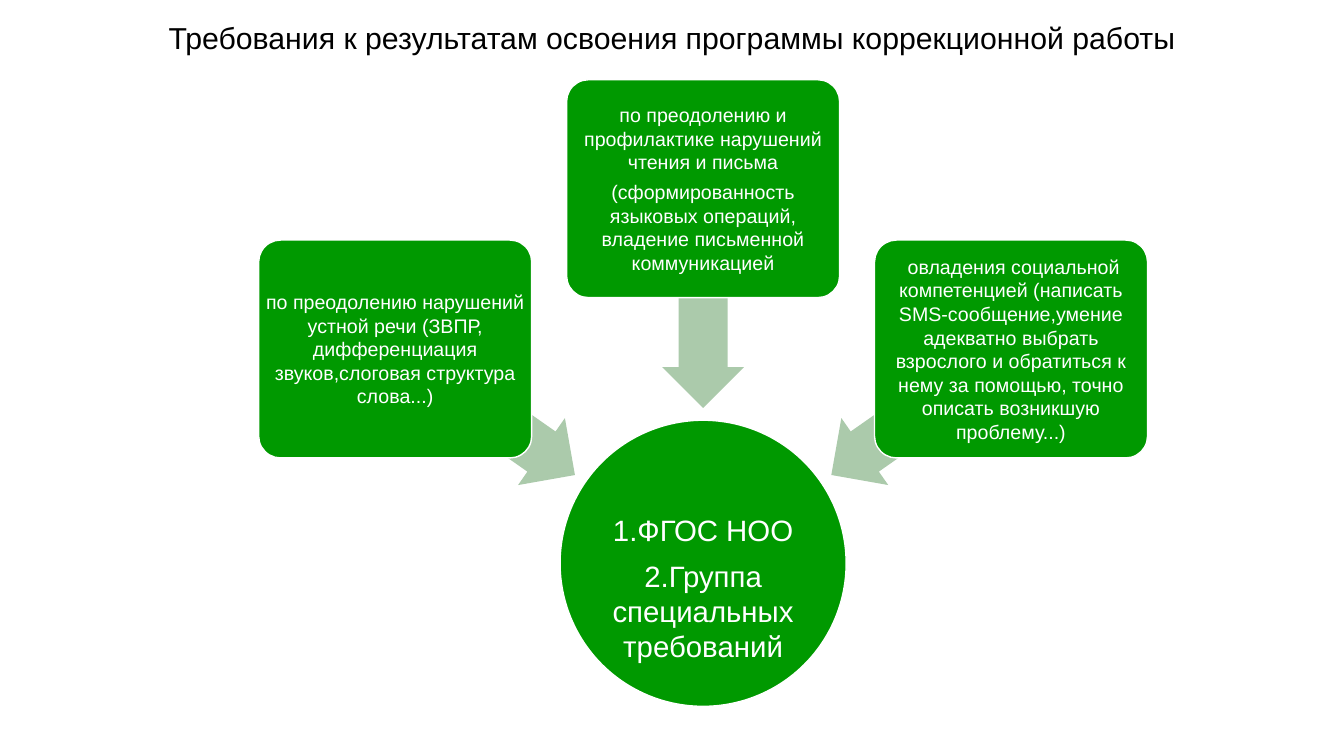
from dataclasses import dataclass

from pptx import Presentation
from pptx import util as u
from pptx.dml.color import RGBColor
from pptx.enum import shapes, text

GREEN, PALE_GREEN, WHITE, BLACK = "009900", "ABCAAB", "FFFFFF", "000000"
AXIS = 17.72  # centre of the diagram, cm
BOX_W, BOX_H, BOX_STEP = 6.88, 5.49, 7.76
ARROW_W, ARROW_H, ARROW_STEP = 5.54, 2.06, 5.5
CIRCLE_D, CIRCLE_TOP = 7.21, 10.59


@dataclass
class Requirement:
    column: int  # -1 left, 0 middle, 1 right of the axis
    box_top: float
    arrow_middle: float
    arrow_angle: int
    paragraphs: list[str]


REQUIREMENTS = [
    Requirement(-1, 6.05, 10.38, 215, [
        "по преодолению нарушений устной речи (ЗВПР, дифференциация "
        "звуков,слоговая структура слова...)"]),
    Requirement(0, 2.01, 7.51, 270, [
        "по преодолению и профилактике нарушений чтения и письма",
        "(сформированность языковых операций, владение письменной коммуникацией"]),
    Requirement(1, 6.05, 10.38, 325, [
        " овладения социальной компетенцией (написать SMS-сообщение,умение "
        "адекватно выбрать взрослого и обратиться к нему за помощью, точно "
        "описать возникшую проблему...)"]),
]


def rgb(value: str) -> RGBColor:
    return RGBColor.from_string(value)


def write(shape, paragraphs: list[str], size: float, color: str,
          top_inset: float = 0) -> None:
    frame = shape.text_frame
    frame.word_wrap = True
    frame.vertical_anchor = text.MSO_ANCHOR.MIDDLE
    frame.margin_left = frame.margin_right = frame.margin_bottom = 0
    frame.margin_top = u.Cm(top_inset)
    for index, words in enumerate(paragraphs):
        paragraph = frame.add_paragraph() if index else frame.paragraphs[0]
        paragraph.alignment = text.PP_ALIGN.CENTER
        paragraph.line_spacing = u.Pt(round(size * 1.2, 1))
        if index:
            paragraph.space_before = u.Pt(round(size * 0.35, 1))
        run = paragraph.add_run()
        run.text = words
        run.font.name = "Arial"
        run.font.size = u.Pt(size)
        run.font.color.rgb = rgb(color)


def add_figure(slide, kind, center: float, top: float, width: float,
               height: float, fill: str, outlined: bool = True):
    figure = slide.shapes.add_shape(kind, u.Cm(center - width / 2), u.Cm(top),
                                    u.Cm(width), u.Cm(height))
    figure.shadow.inherit = False
    figure.fill.solid()
    figure.fill.fore_color.rgb = rgb(fill)
    if outlined:
        figure.line.color.rgb = rgb(WHITE)
        figure.line.width = u.Pt(1)
    else:
        figure.line.fill.background()
    return figure


def add_requirement(slide, item: Requirement) -> None:
    arrow = add_figure(slide, shapes.MSO_SHAPE.LEFT_ARROW,
                       AXIS + item.column * ARROW_STEP,
                       item.arrow_middle - ARROW_H / 2,
                       ARROW_W, ARROW_H, PALE_GREEN, outlined=False)
    arrow.adjustments[0], arrow.adjustments[1] = 0.6, 0.5
    arrow.rotation = item.arrow_angle

    box = add_figure(slide, shapes.MSO_SHAPE.ROUNDED_RECTANGLE,
                     AXIS + item.column * BOX_STEP, item.box_top,
                     BOX_W, BOX_H, GREEN)
    box.adjustments[0] = 0.1
    write(box, item.paragraphs, 14, WHITE)


def main() -> None:
    deck = Presentation()
    deck.slide_width, deck.slide_height = u.Cm(33.87), u.Cm(19.05)
    slide = deck.slides.add_slide(deck.slide_layouts[6])

    # Title
    title = slide.shapes.add_textbox(u.Cm(1.7), u.Cm(0.4), u.Cm(30.48), u.Cm(1.1))
    write(title, ["Требования к результатам освоения программы коррекционной работы"],
          21.6, BLACK)

    # Central circle
    circle = add_figure(slide, shapes.MSO_SHAPE.OVAL, AXIS, CIRCLE_TOP,
                        CIRCLE_D, CIRCLE_D, GREEN)
    write(circle, ["1.ФГОС НОО", "2.Группа специальных требований"],
          21, WHITE, top_inset=1.25)

    # Requirements pointing at the circle
    for item in REQUIREMENTS:
        add_requirement(slide, item)

    deck.save("out.pptx")


if __name__ == "__main__":
    main()
